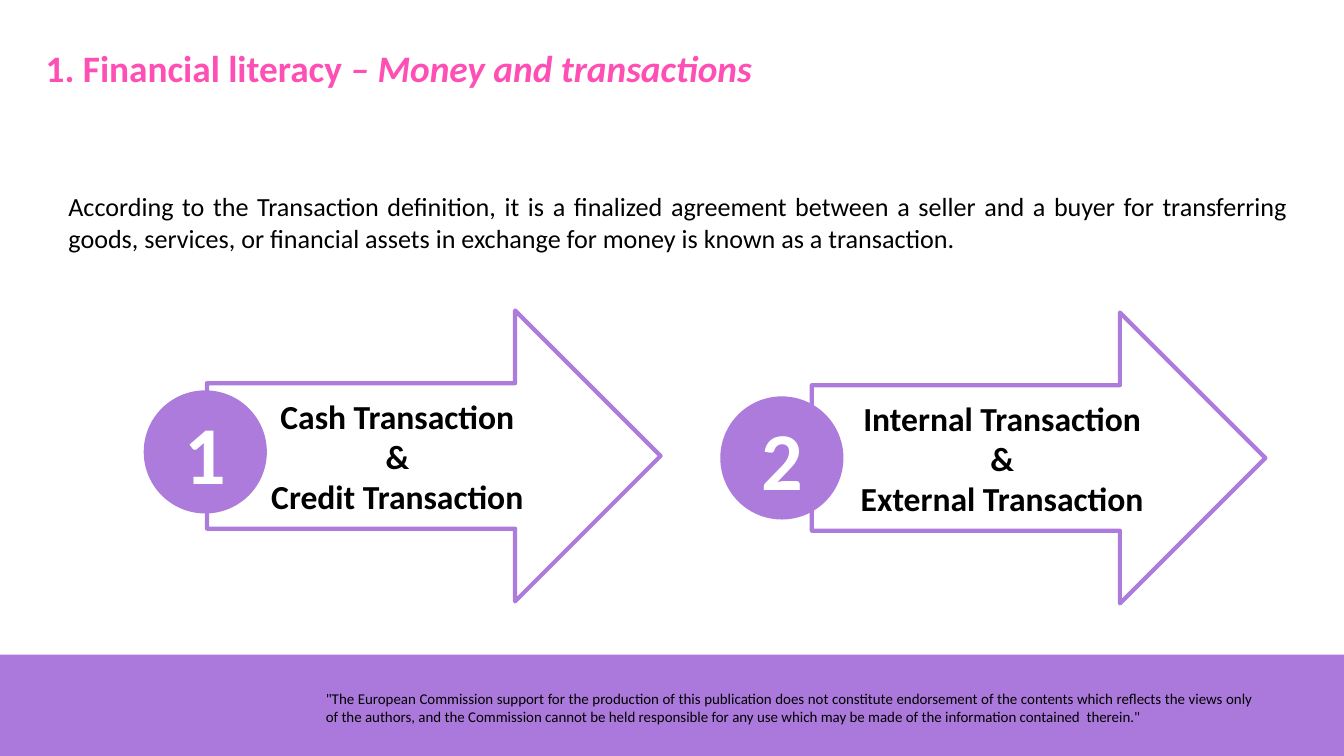
from pptx import Presentation
from pptx.dml.color import RGBColor
from pptx.enum.shapes import MSO_SHAPE as Preset
from pptx.enum.text import MSO_ANCHOR as Anchor, MSO_AUTO_SIZE as AutoSize, PP_ALIGN as Align
from pptx.util import Inches, Pt

COLORS = {"pink": "FD4FB4", "purple": "AC7BDC", "band": "AB79DB", "black": "000000", "white": "FFFFFF"}
FRAME = {"word_wrap": True, "auto_size": AutoSize.NONE, "vertical_anchor": Anchor.TOP}
HEADING = {"size": Pt(40), "bold": True}
BODY = {"size": Pt(28)}
NOTICE = {"size": Pt(16)}
ARROW_LABEL = {"size": Pt(36), "bold": True}
NUMBER = {"size": Pt(88), "bold": True}

TRANSACTIONS = [
    ("1", ["Cash Transaction", "&", "Credit Transaction"], (3.08, 4.62), (2.17, 5.84)),
    ("2", ["Internal Transaction", "&", "External Transaction"], (12.08, 4.65), (10.75, 5.93)),
]
DEFINITION = (
    "According to the Transaction definition, it is a finalized agreement between a seller and a buyer "
    "for transferring goods, services, or financial assets in exchange for money is known as a transaction."
)
DISCLAIMER = (
    "\"The European Commission support for the production of this publication does not constitute "
    "endorsement of the contents which reflects the views only of the authors, and the Commission cannot "
    "be held responsible for any use which may be made of the information contained  therein.\""
)


def rgb(name):
    """Return the named colour."""
    return RGBColor.from_string(COLORS[name])


def apply(target, values):
    """Set each attribute of the target from a dict."""
    for attribute, value in values.items():
        setattr(target, attribute, value)


def style_font(font, color, values):
    """Give a font its typeface, colour and format values."""
    apply(font, {"name": "Calibri", **values})
    font.color.rgb = rgb(color)


def write_lines(frame, lines, color, values, align, anchor=Anchor.TOP):
    """Write one formatted paragraph for each line."""
    apply(frame, {**FRAME, "vertical_anchor": anchor})
    for index, line in enumerate(lines):
        paragraph = frame.paragraphs[0] if index == 0 else frame.add_paragraph()
        paragraph.alignment = align
        style_font(paragraph.font, color, values)
        paragraph.add_run().text = line


def add_heading(slide):
    """Place the title with its italic topic."""
    heading = slide.shapes.title
    apply(heading, {"left": Inches(0.58), "top": Inches(0.62), "width": Inches(13.67), "height": Inches(0.77)})
    write_lines(heading.text_frame, ["1. Financial literacy "], "pink", HEADING, Align.LEFT)
    topic = heading.text_frame.paragraphs[0].add_run()
    topic.text = "– Money and transactions"
    topic.font.italic = True


def add_passage(slide, box, passage, values, spacing=1.0):
    """Add a justified text box."""
    frame = slide.shapes.add_textbox(*map(Inches, box)).text_frame
    write_lines(frame, [passage], "black", values, Align.JUSTIFY)
    frame.paragraphs[0].line_spacing = spacing


def add_figure(slide, preset, box, fill=None, outline=None):
    """Add a flat shape with an optional fill and outline."""
    figure = slide.shapes.add_shape(preset, *map(Inches, box))
    figure.shadow.inherit = False
    if fill:
        figure.fill.solid()
        figure.fill.fore_color.rgb = rgb(fill)
    else:
        figure.fill.background()
    if outline:
        figure.line.color.rgb = rgb(outline)
        figure.line.width = Pt(4.5)
    else:
        figure.line.fill.background()
    return figure


def add_transaction(slide, number, kinds, arrow_at, badge_at):
    """Add an arrow of transaction kinds with its numbered badge."""
    arrow = add_figure(slide, Preset.RIGHT_ARROW, (*arrow_at, 6.75, 4.33), outline="purple")
    write_lines(arrow.text_frame, kinds, "black", ARROW_LABEL, Align.CENTER, Anchor.MIDDLE)
    badge = add_figure(slide, Preset.OVAL, (*badge_at, 1.77, 1.77), "purple", "purple")
    write_lines(badge.text_frame, [number], "white", NUMBER, Align.CENTER, Anchor.MIDDLE)


def main():
    """Build and save the slide."""
    deck = Presentation()
    apply(deck, {"slide_width": Inches(20), "slide_height": Inches(11.25)})
    slide = deck.slides.add_slide(deck.slide_layouts[5])
    add_figure(slide, Preset.RECTANGLE, (0, 9.74, 20, 1.51), "band")
    add_passage(slide, (4.75, 10.21, 14, 0.55), DISCLAIMER, NOTICE, 1.01)
    add_heading(slide)
    add_passage(slide, (0.92, 2.79, 18.33, 1.04), DEFINITION, BODY)
    for transaction in TRANSACTIONS:
        add_transaction(slide, *transaction)
    deck.save("out.pptx")


if __name__ == "__main__":
    main()
